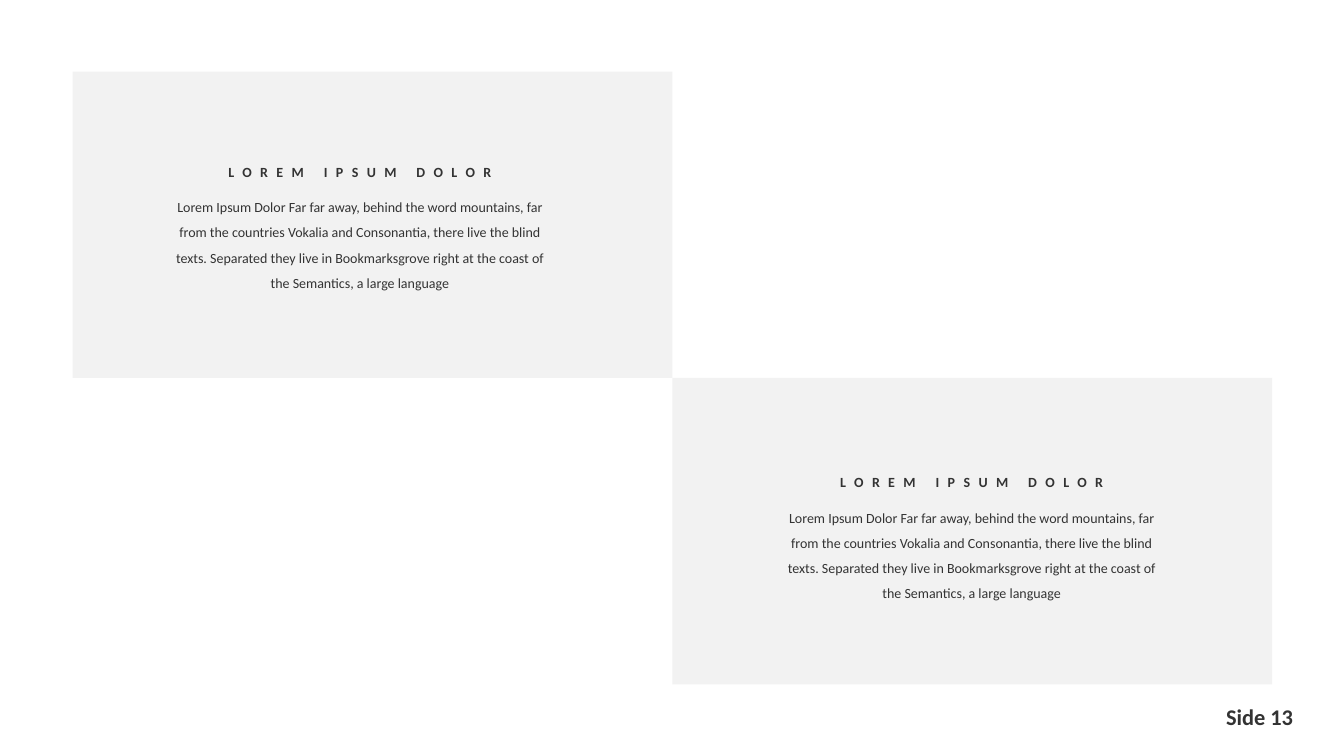
from pptx import Presentation
from pptx.dml.color import RGBColor
from pptx.enum.shapes import MSO_SHAPE
from pptx.enum.text import PP_ALIGN
from pptx.util import Pt

COLORS = {"text": "333333", "panel": "F2F2F2"}
FONT = "Calibri"
HEADING = "LOREM IPSUM DOLOR"
BODY = (
    "Lorem Ipsum Dolor Far far away, behind the word mountains, far from the "
    "countries Vokalia and Consonantia, there live the blind texts. Separated "
    "they live in Bookmarksgrove right at the coast of the Semantics, a large language"
)
PAGE_LABEL = "Side 13"

PANEL_WIDTH, PANEL_HEIGHT = 428.4, 218.9
PANEL_LEFT, PANEL_TOP = 51.84, 51.1
TEXT_WIDTH, HEADING_HEIGHT, BODY_HEIGHT = 290.9, 19.4, 79.9
TEXT_STARTS = [(111.6, 113), (548.6, 334.8)]


def add_panel(page, left, top):
    panel = page.shapes.add_shape(
        MSO_SHAPE.RECTANGLE, Pt(left), Pt(top), Pt(PANEL_WIDTH), Pt(PANEL_HEIGHT)
    )
    panel.shadow.inherit = False
    panel.fill.solid()
    panel.fill.fore_color.rgb = RGBColor.from_string(COLORS["panel"])
    panel.line.fill.background()


def add_text(page, text, left, top, width, height, size=10, bold=False,
             align=PP_ALIGN.CENTER, line_spacing=None, tracking=0, insets=(7.2, 3.6)):
    box = page.shapes.add_textbox(Pt(left), Pt(top), Pt(width), Pt(height))
    frame = box.text_frame
    frame.word_wrap = True
    frame.margin_left = frame.margin_right = Pt(insets[0])
    frame.margin_top = frame.margin_bottom = Pt(insets[1])
    para = frame.paragraphs[0]
    para.alignment = align
    if line_spacing:
        para.line_spacing = line_spacing
    span = para.add_run()
    span.text = text
    span.font.name = FONT
    span.font.size = Pt(size)
    span.font.bold = bold
    span.font.color.rgb = RGBColor.from_string(COLORS["text"])
    if tracking:
        span.font._element.set("spc", str(tracking * 100))


def main():
    deck = Presentation()
    deck.slide_width, deck.slide_height = Pt(960), Pt(540)
    page = deck.slides.add_slide(deck.slide_layouts[6])
    add_text(page, PAGE_LABEL, 818.6, 495.4, 119.5, 33.8, size=16, bold=True,
             align=PP_ALIGN.RIGHT, insets=(14.4, 7.2))
    for step, (left, top) in enumerate(TEXT_STARTS):
        add_panel(page, PANEL_LEFT + step * PANEL_WIDTH, PANEL_TOP + step * PANEL_HEIGHT)
        add_text(page, HEADING, left, top, TEXT_WIDTH, HEADING_HEIGHT, bold=True, tracking=6)
        add_text(page, BODY, left, top + HEADING_HEIGHT, TEXT_WIDTH, BODY_HEIGHT,
                 line_spacing=1.5)
    deck.save("out.pptx")


if __name__ == "__main__":
    main()
